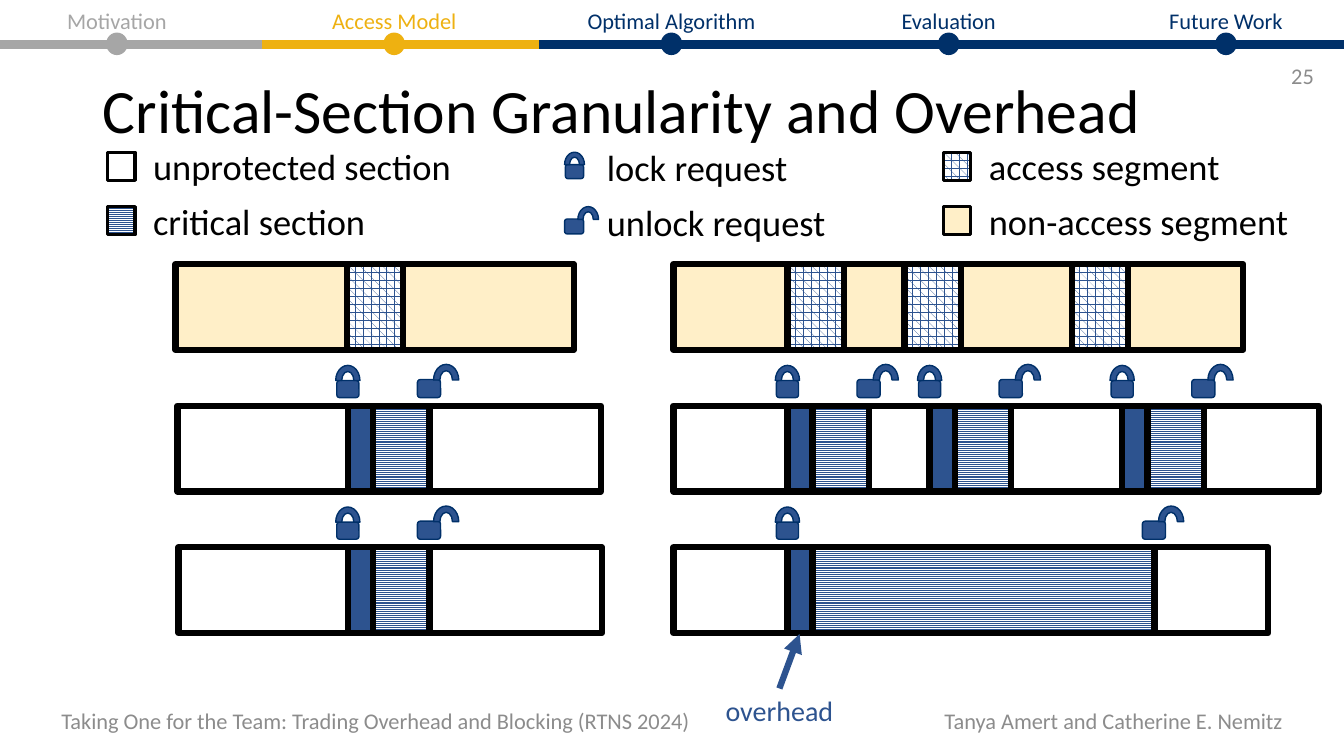
from pptx import Presentation
from pptx.dml.color import RGBColor
from pptx.enum.dml import MSO_PATTERN
from pptx.enum.shapes import MSO_CONNECTOR, MSO_SHAPE
from pptx.enum.text import MSO_ANCHOR, PP_ALIGN
from pptx.oxml.ns import qn
from pptx.util import Inches, Pt
from lxml import etree

RECT, ROUNDED = MSO_SHAPE.RECTANGLE, MSO_SHAPE.ROUNDED_RECTANGLE
ARC, OVAL = MSO_SHAPE.BLOCK_ARC, MSO_SHAPE.OVAL
LEFT, CENTER, RIGHT = PP_ALIGN.LEFT, PP_ALIGN.CENTER, PP_ALIGN.RIGHT
TOP, MIDDLE = MSO_ANCHOR.TOP, MSO_ANCHOR.MIDDLE
ACCESS, CRITICAL = MSO_PATTERN.PLAID, MSO_PATTERN.LIGHT_HORIZONTAL
BLACK, WHITE, NAVY, BLUE = "000000", "FFFFFF", "003069", "2D538F"
GOLD, CREAM, GRAY, FOOTER_GRAY = "EEB111", "FFEFC8", "A6A6A6", "8C8C8C"
WIDTH, HEIGHT = 13.33, 7.5
BAR_HEIGHT, SEGMENT, OVERHEAD = 0.85, 0.56, 0.25
BAR_TOPS = [2.62 + 1.405 * row for row in range(3)]


def color(value):
    """Turn a hex string into a colour."""
    return RGBColor.from_string(value)


def inches(*lengths):
    """Convert lengths in inches to slide units."""
    return [Inches(length) for length in lengths]


def format_text(shape, text, size=16, fill=BLACK, align=LEFT, anchor=MIDDLE, spacing=None):
    """Write one formatted paragraph into a shape."""
    frame = shape.text_frame
    frame.word_wrap = True
    frame.vertical_anchor = anchor
    paragraph = frame.paragraphs[0]
    paragraph.alignment = align
    paragraph.line_spacing = spacing
    run = paragraph.add_run()
    run.text = text
    run.font.name = "Calibri"
    run.font.size = Pt(size)
    run.font.color.rgb = color(fill)


def add_text(slide, box, text, **options):
    """Add a text box."""
    format_text(slide.shapes.add_textbox(*inches(*box)), text, **options)


def add_shape(slide, kind, box, fill=None, line=BLACK, weight=4.5):
    """Add a preset shape with a solid, patterned or empty fill."""
    shape = slide.shapes.add_shape(kind, *inches(*box))
    shape.shadow.inherit = False
    if fill is None:
        shape.fill.background()
    elif isinstance(fill, str):
        shape.fill.solid()
        shape.fill.fore_color.rgb = color(fill)
    else:
        shape.fill.patterned()
        shape.fill.pattern = fill
        shape.fill.fore_color.rgb = color(BLUE)
        shape.fill.back_color.rgb = color(WHITE)
    shape.line.color.rgb = color(line)
    shape.line.width = Pt(weight)


def add_line(slide, ends, stroke, weight, arrow=False):
    """Add a straight line, with an arrowhead at its end if wanted."""
    connector = slide.shapes.add_connector(MSO_CONNECTOR.STRAIGHT, *inches(*ends))
    connector.line.color.rgb = color(stroke)
    connector.line.width = Pt(weight)
    if arrow:
        line = connector.line._get_or_add_ln()
        etree.SubElement(line, qn("a:tailEnd"), type="triangle")
    etree.SubElement(connector._element.spPr, qn("a:effectLst"))


def add_padlock(slide, left, top, is_open=False, scale=1):
    """Draw a closed or open padlock from a body and a shackle."""
    if is_open:
        body, shackle = (0, 0.15, 0.23, 0.18), (0.16, 0, 0.25, 0.31)
    else:
        body, shackle = (0.01, 0.15, 0.22, 0.17), (0, 0, 0.24, 0.3)
    for kind, (x, y, width, height) in ((ROUNDED, body), (ARC, shackle)):
        box = (left + x * scale, top + y * scale, width * scale, height * scale)
        add_shape(slide, kind, box, BLUE, NAVY, 1)


def add_timeline(slide):
    """Draw the progress line with its five stages."""
    stages = [("Motivation", GRAY), ("Access Model", GOLD), ("Optimal Algorithm", NAVY),
              ("Evaluation", NAVY), ("Future Work", NAVY)]
    for start, end, stroke in ((5.35, WIDTH, NAVY), (2.6, 5.35, GOLD), (0, 2.6, GRAY)):
        add_line(slide, (start, 0.44, end, 0.44), stroke, 6)
    for index, (name, fill) in enumerate(stages):
        center = 1.16 + 2.75 * index
        add_text(slide, (center - 1.1, 0.02, 2.2, 0.37), name,
                 fill=fill, align=CENTER, anchor=TOP)
        add_shape(slide, OVAL, (center - 0.1, 0.33, 0.2, 0.21), fill, fill, 1)


def add_legend(slide, top, row_height):
    """Draw the legend in three columns and two rows."""
    swatches = [(1.07, 0, None, "unprotected section"), (1.07, 1, CRITICAL, "critical section"),
                (9.36, 0, ACCESS, "access segment"), (9.36, 1, CREAM, "non-access segment")]
    for left, row, fill, label in swatches:
        y = top + row * row_height
        add_shape(slide, RECT, (left, y, 0.27, 0.28), fill, weight=2.25)
        add_text(slide, (left + 0.35, y - 0.13, 3.6, 0.54), label, size=26)
    for row, label in enumerate(("lock request", "unlock request")):
        y = top + row * row_height
        add_padlock(slide, 5.6, y, is_open=row == 1, scale=0.82)
        add_text(slide, (5.92, y - 0.12, 2.75, 0.54), label, size=26)


def add_access_bar(slide, left, top, width, offsets):
    """Draw a bar of non-access time with access segments."""
    add_shape(slide, RECT, (left, top, width, BAR_HEIGHT), CREAM)
    for offset in offsets:
        add_shape(slide, RECT, (left + offset, top, SEGMENT, BAR_HEIGHT), ACCESS)


def add_locked_bar(slide, left, top, width, offsets, length=SEGMENT):
    """Draw a bar whose critical sections follow overhead and sit between padlocks."""
    add_shape(slide, RECT, (left, top, width, BAR_HEIGHT))
    for offset in offsets:
        start = left + offset
        critical = start + OVERHEAD
        add_shape(slide, RECT, (critical, top, length, BAR_HEIGHT), CRITICAL)
        add_shape(slide, RECT, (start, top, OVERHEAD, BAR_HEIGHT), BLUE)
        add_padlock(slide, start - 0.12, top - 0.4)
        add_padlock(slide, critical + length - 0.12, top - 0.41, is_open=True)


def add_overhead_label(slide, left, top):
    """Point out the overhead with an arrow and a label."""
    add_line(slide, (left + 0.74, top, left + 0.94, top - 0.54), BLUE, 4.5, arrow=True)
    add_text(slide, (left, top, 1.48, 0.44), "overhead",
             size=20, fill=BLUE, align=CENTER, anchor=TOP)


def add_margins(slide):
    """Write the slide number and the two footers."""
    add_text(slide, (10.13, 0.55, 3, 0.4), "25", fill=FOOTER_GRAY, align=RIGHT)
    add_text(slide, (0.51, 6.95, 6.6, 0.4),
             "Taking One for the Team: Trading Overhead and Blocking (RTNS 2024)",
             fill=FOOTER_GRAY)
    add_text(slide, (9.03, 6.95, 3.79, 0.4), "Tanya Amert and Catherine E. Nemitz",
             fill=FOOTER_GRAY, align=RIGHT)


def add_title(slide, box):
    """Place and format the title placeholder."""
    title = slide.shapes.title
    title.left, title.top, title.width, title.height = inches(*box)
    format_text(title, "Critical-Section Granularity and Overhead", size=44, spacing=0.9)


def main():
    """Build the slide and save it."""
    presentation = Presentation()
    presentation.slide_width, presentation.slide_height = inches(WIDTH, HEIGHT)
    slide = presentation.slides.add_slide(presentation.slide_layouts[5])
    add_title(slide, (0.92, 0.4, 11.5, 1.45))
    add_margins(slide)
    add_legend(slide, 1.51, 0.54)
    access_top, fine_top, coarse_top = BAR_TOPS
    add_access_bar(slide, 1.74, access_top, 3.95, [1.7])
    add_locked_bar(slide, 1.76, fine_top, 4.2, [1.69])
    add_locked_bar(slide, 1.77, coarse_top, 4.2, [1.68])
    add_access_bar(slide, 6.68, access_top, 5.65, [1.13, 2.29, 3.95])
    add_locked_bar(slide, 6.68, fine_top, 6.4, [1.13, 2.54, 4.45])
    add_locked_bar(slide, 6.68, coarse_top, 5.9, [1.13], length=3.39)
    add_timeline(slide)
    add_overhead_label(slide, 6.99, 6.83)
    presentation.save("out.pptx")


if __name__ == "__main__":
    main()
